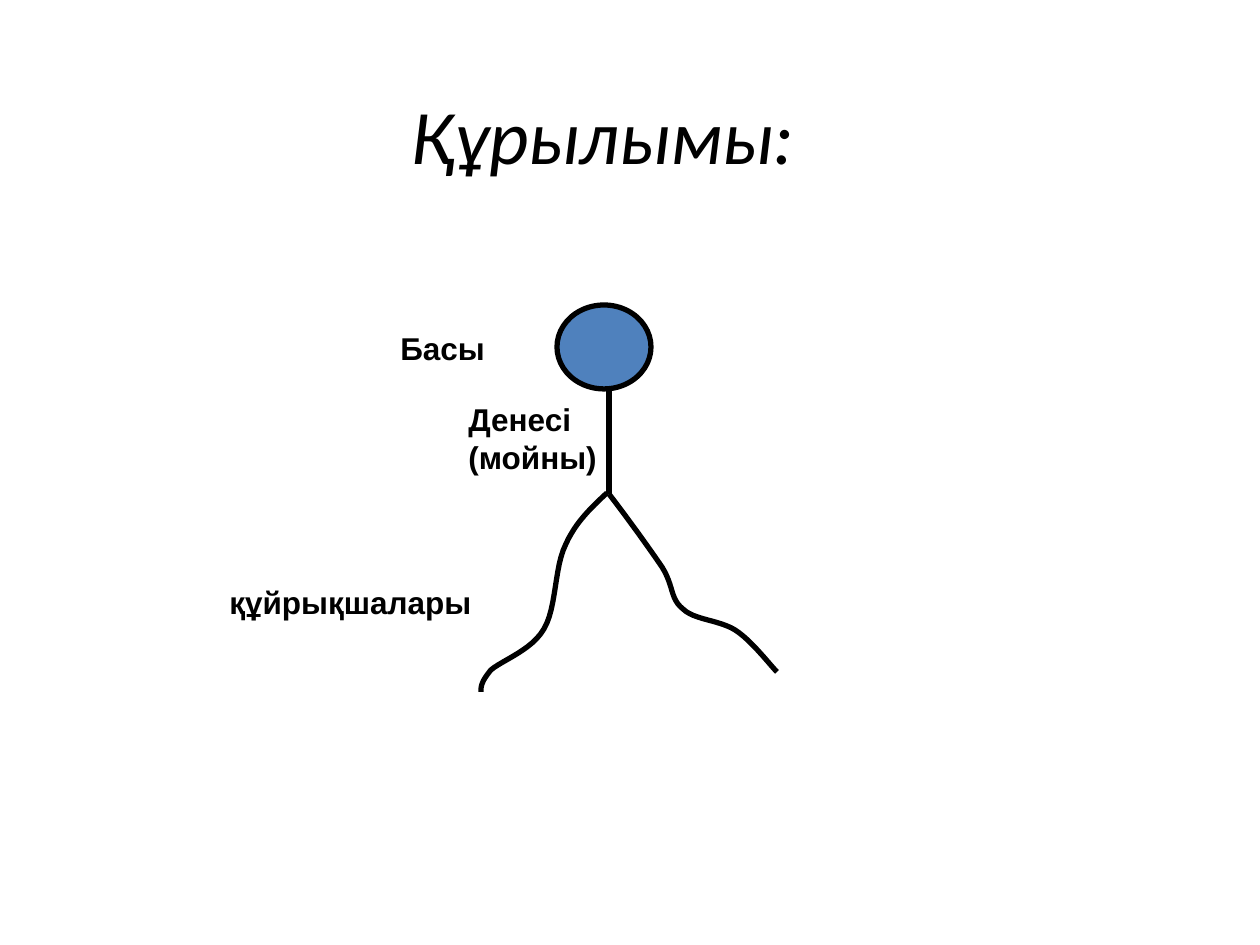
from pptx import Presentation
from pptx.dml.color import RGBColor
from pptx.enum.shapes import MSO_CONNECTOR as Link, MSO_SHAPE as Shape
from pptx.enum.text import MSO_ANCHOR as Anchor, MSO_AUTO_SIZE as Fit, PP_ALIGN as Align
from pptx.oxml.ns import qn
from pptx.util import Pt
from lxml.etree import SubElement

PX = 914400 // 126
BLACK = "000000"
LABELS = [
    ("Басы", (388, 323, 242, 50)),
    ("Денесі (мойны)", (456, 394, 262, 88)),
    ("құйрықшалары", (217, 577, 354, 50)),
]
TAILS = [
    [(609, 494), (629, 520), (649, 548), (662, 567), (674, 586), (670, 599), (683, 609),
     (694, 620), (719, 620), (735, 630), (751, 640), (770, 665), (777, 672)],
    [(607, 493), (591, 508), (576, 522), (566, 544), (554, 568), (557, 607), (544, 629),
     (532, 650), (503, 660), (491, 670), (481, 682), (481, 687), (481, 692)],
]


def px(*nums):
    """Turn pixel lengths into EMU."""
    return [round(n * PX) for n in nums]


def color(code):
    """Return the colour for a hex string."""
    return RGBColor.from_string(code)


def stroke(shape):
    """Give a shape the thick black outline."""
    shape.line.color.rgb = color(BLACK)
    shape.line.width = Pt(3)


def add_text(slide, text, box, size=18, font="Arial", bold=False, italic=False,
             align=Align.LEFT, anchor=Anchor.TOP, fit=Fit.NONE):
    """Add a wrapped text box."""
    frame = slide.shapes.add_textbox(*px(*box)).text_frame
    frame.word_wrap = True
    frame.auto_size = fit
    frame.vertical_anchor = anchor
    para = frame.paragraphs[0]
    para.alignment = align
    run = para.add_run()
    run.text = text
    run.font.size = Pt(size)
    run.font.name = font
    run.font.bold = bold
    run.font.italic = italic
    run.font.color.rgb = color(BLACK)


def add_head(slide, box, fill):
    """Add the filled oval head."""
    head = slide.shapes.add_shape(Shape.OVAL, *px(*box))
    head.shadow.inherit = False
    head.fill.solid()
    head.fill.fore_color.rgb = color(fill)
    stroke(head)


def add_neck(slide, start, end):
    """Add the straight neck line."""
    neck = slide.shapes.add_connector(Link.STRAIGHT, *px(*start, *end))
    stroke(neck)
    SubElement(neck._element.spPr, qn("a:effectLst"))


def trace(knots, steps=12):
    """Return EMU points along a chain of cubic curves."""
    dots = [px(*knots[0])]
    for i in range(0, len(knots) - 1, 3):
        for k in range(1, steps + 1):
            t = k / steps
            parts = ((1 - t) ** 3, 3 * t * (1 - t) ** 2, 3 * t * t * (1 - t), t ** 3)
            dots.append(px(*(sum(w * p[a] for w, p in zip(parts, knots[i:i + 4]))
                             for a in (0, 1))))
    return dots


def add_tail(slide, knots):
    """Add one open curved tail."""
    first, *rest = trace(knots)
    pen = slide.shapes.build_freeform(*first)
    pen.add_line_segments(rest, close=False)
    tail = pen.convert_to_shape()
    tail.shadow.inherit = False
    tail.fill.background()
    stroke(tail)


def main():
    """Build and save the slide."""
    deck = Presentation()
    deck.slide_width, deck.slide_height = px(1260, 945)
    slide = deck.slides.add_slide(deck.slide_layouts[6])
    add_text(slide, "Құрылымы:", (155, 55, 897, 158), size=44, font="Calibri",
             italic=True, align=Align.CENTER, anchor=Anchor.MIDDLE)
    add_head(slide, (557, 305, 94, 84), "4F81BD")
    add_neck(slide, (609, 388), (609, 494))
    for knots in TAILS:
        add_tail(slide, knots)
    for text, box in LABELS:
        add_text(slide, text, box, bold=True, fit=Fit.SHAPE_TO_FIT_TEXT)
    deck.save("out.pptx")


if __name__ == "__main__":
    main()
